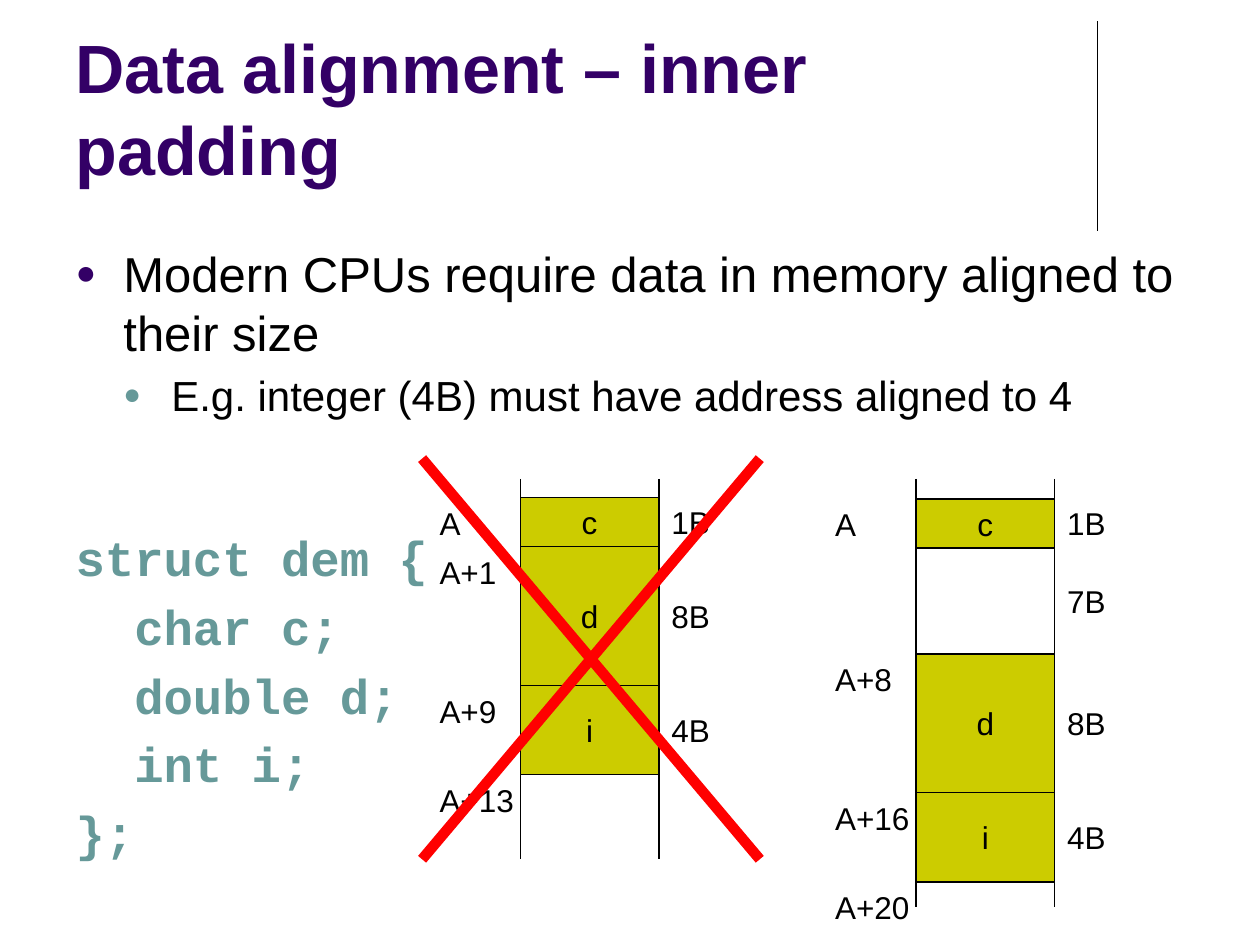
from dataclasses import dataclass

import pptx
import pptx.dml.color
import pptx.enum.shapes
import pptx.enum.text
import pptx.oxml.ns
import pptx.util

Inches, Pt = pptx.util.Inches, pptx.util.Pt
ANCHOR, ALIGN = pptx.enum.text.MSO_ANCHOR, pptx.enum.text.PP_ALIGN


@dataclass(frozen=True)
class Theme:
    sans: str = "Arial"
    mono: str = "Courier New"
    ink: str = "000000"
    purple: str = "330066"
    teal: str = "669999"
    block: str = "CCCC00"
    cross: str = "FF0000"
    title: float = 39
    body: float = 28
    sub: float = 24
    label: float = 18
    hairline: float = 0.75
    cross_width: float = 6


THEME = Theme()


def rgb(color):
    return pptx.dml.color.RGBColor.from_string(color)


def add_element(parent, tag, **attributes):
    el = parent.makeelement(pptx.oxml.ns.qn(tag), attributes)
    parent.append(el)
    return el


def add_run(p, text, size, color=THEME.ink, font=THEME.sans, bold=False):
    r = p.add_run()
    r.text = text
    r.font.size, r.font.name, r.font.bold = Pt(size), font, bold
    r.font.color.rgb = rgb(color)


def add_line(slide, x1, y1, x2, y2, color=THEME.ink, width=THEME.hairline):
    line = slide.shapes.add_connector(
        pptx.enum.shapes.MSO_CONNECTOR.STRAIGHT,
        Inches(x1), Inches(y1), Inches(x2), Inches(y2))
    line.line.color.rgb = rgb(color)
    line.line.width = Pt(width)
    add_element(line._element.spPr, "a:effectLst")


def place(sp, left, top, width, height, anchor=ANCHOR.TOP):
    """Move a placeholder and return its text frame, set not to resize."""
    sp.left, sp.top = Inches(left), Inches(top)
    sp.width, sp.height = Inches(width), Inches(height)
    tf = sp.text_frame
    tf.word_wrap, tf.vertical_anchor = True, anchor
    tf.auto_size = pptx.enum.text.MSO_AUTO_SIZE.NONE
    return tf


def add_paragraph(tf, index, space):
    p = tf.paragraphs[0] if index == 0 else tf.add_paragraph()
    p.alignment = ALIGN.LEFT
    p.space_before = Pt(space if index else 0)
    return p


def set_bullet(p, indent=0.0, hanging=0.0, color=None):
    """Give the paragraph a round bullet, or none when there is no color."""
    pPr = p._p.get_or_add_pPr()
    pPr.set("marL", str(Inches(indent)))
    pPr.set("indent", str(-Inches(hanging)))
    if color is None:
        add_element(pPr, "a:buNone")
        return
    add_element(add_element(pPr, "a:buClr"), "a:srgbClr", val=color)
    add_element(pPr, "a:buSzPct", val="70000")
    add_element(pPr, "a:buFont", typeface=THEME.sans)
    add_element(pPr, "a:buChar", char="●")


def add_title(sp, box, text):
    tf = place(sp, *box, anchor=ANCHOR.BOTTOM)
    tf.margin_right = Inches(0.2)
    add_run(add_paragraph(tf, 0, 0), text, THEME.title, THEME.purple, bold=True)


def add_bullets(sp, box, items):
    tf = place(sp, *box)
    styles = [(THEME.body, THEME.purple), (THEME.sub, THEME.teal)]
    for i, (level, text) in enumerate(items):
        size, color = styles[level]
        p = add_paragraph(tf, i, 4.8)
        p.level = level
        set_bullet(p, 0.38 * (level + 1), 0.38, color)
        add_run(p, text, size)


def add_code(sp, box, lines):
    tf = place(sp, *box)
    tf.margin_right = 0
    for i, text in enumerate(lines):
        p = add_paragraph(tf, i, 5.6)
        set_bullet(p)
        add_run(p, text, THEME.body, THEME.teal, THEME.mono, True)


def add_label(slide, left, top, width, text):
    tf = slide.shapes.add_textbox(
        Inches(left), Inches(top), Inches(width), Inches(0.4)).text_frame
    tf.word_wrap = False
    p = tf.paragraphs[0]
    p.alignment = ALIGN.LEFT
    add_run(p, text, THEME.label)


def add_block(slide, left, top, width, height, name):
    sp = slide.shapes.add_shape(
        pptx.enum.shapes.MSO_SHAPE.RECTANGLE,
        Inches(left), Inches(top), Inches(width), Inches(height))
    sp.shadow.inherit = False
    sp.fill.solid()
    sp.fill.fore_color.rgb = rgb(THEME.block)
    sp.line.color.rgb = rgb(THEME.ink)
    sp.line.width = Pt(THEME.hairline)
    tf = sp.text_frame
    tf.word_wrap, tf.vertical_anchor = False, ANCHOR.MIDDLE
    p = tf.paragraphs[0]
    p.alignment = ALIGN.CENTER
    add_run(p, name, THEME.label)


def add_memory(slide, box, first_top, blocks, end_address):
    """Stack (name, address, bytes, height) blocks; a nameless one is padding."""
    left, top, width, height = box

    def add_address(y, text):
        label_width = {1: 0.37, 3: 0.66, 4: 0.8}[len(text)]
        add_label(slide, left - 0.74, y, label_width, text)

    for x in (left, left + width):
        add_line(slide, x, top, x, top + height)
    y = first_top
    for name, address, size, block_height in blocks:
        if name:
            add_block(slide, left, y, width, block_height, name)
            add_address(y, address)
        add_label(slide, left + width, y + block_height / 2 - 0.2, 0.51, size)
        y += block_height
    add_address(y, end_address)


def add_cross(slide, left, top, width, height):
    for start, end in ((left, left + width), (left + width, left)):
        add_line(slide, start, top, end, top + height,
                 THEME.cross, THEME.cross_width)


def main():
    prs = pptx.Presentation()
    prs.slide_width, prs.slide_height = Inches(10), Inches(7.5)
    slide = prs.slides.add_slide(prs.slide_layouts.get_by_name("Two Content"))
    title, body, code = slide.placeholders

    add_line(slide, 8.71, 0.17, 8.71, 1.83)
    add_title(title, (0.5, 0.13, 8.25, 1.42), "Data alignment – inner padding")
    add_bullets(body, (0.5, 1.88, 8.99, 1.95), [
        (0, "Modern CPUs require data in memory aligned to their size"),
        (1, "E.g. integer (4B) must have address aligned to 4")])
    add_code(code, (0.5, 4.14, 3.08, 2.91), [
        "struct dem {", "  char c;", "  double d;", "  int i;", "};"])

    add_memory(slide, (4.13, 3.8, 1.1, 3.02), 3.95, [
        ("c", "A", "1B", 0.39), ("d", "A+1", "8B", 1.1),
        ("i", "A+9", "4B", 0.71)], "A+13")
    add_memory(slide, (7.27, 3.8, 1.1, 3.4), 3.96, [
        ("c", "A", "1B", 0.39), (None, None, "7B", 0.84),
        ("d", "A+8", "8B", 1.1), ("i", "A+16", "4B", 0.71)], "A+20")
    add_cross(slide, 3.35, 3.64, 2.68, 3.18)
    prs.save("out.pptx")


if __name__ == "__main__":
    main()
